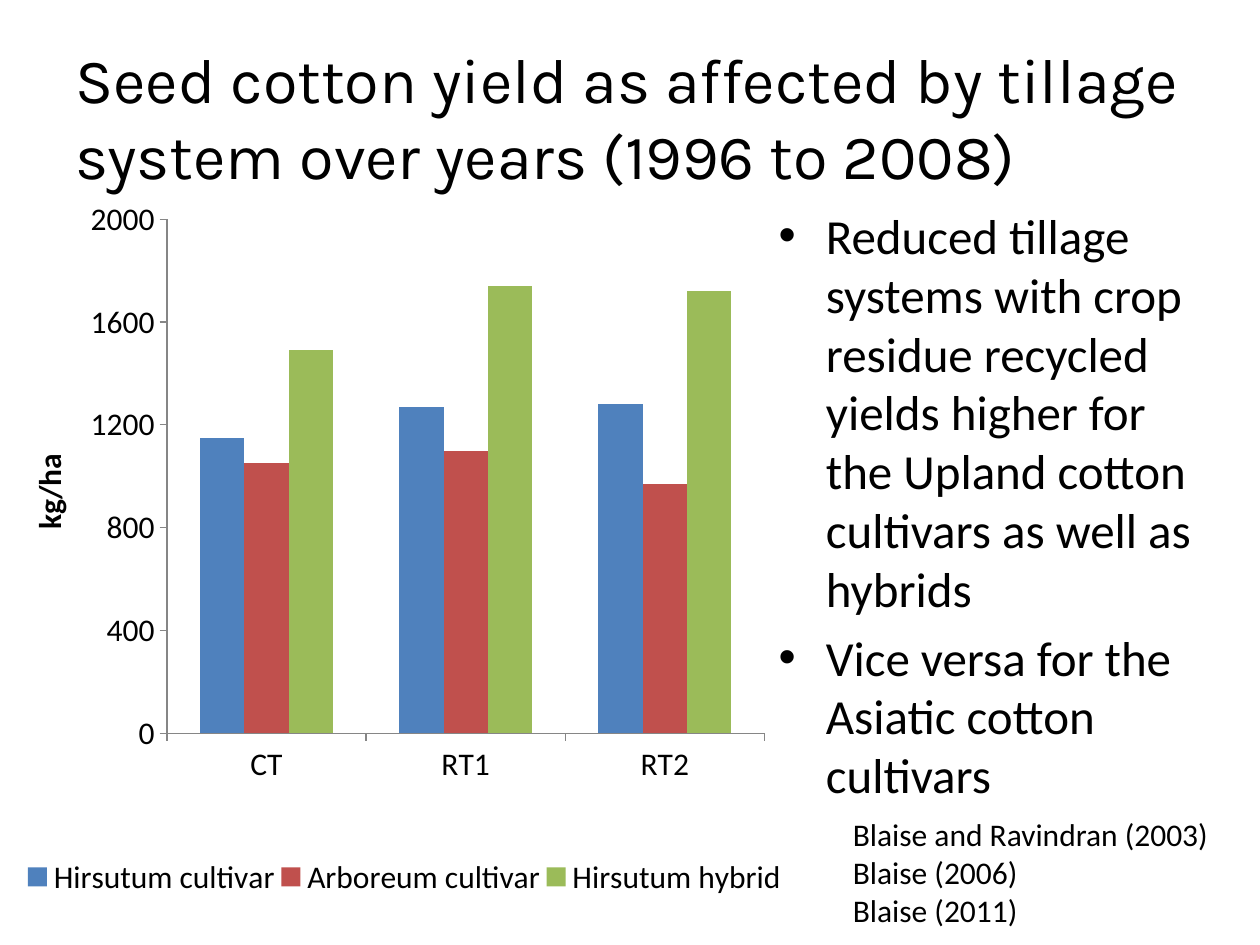
import pptx
import pptx.util
import pptx.chart.data
import pptx.dml.color
import pptx.enum.chart
import pptx.enum.text
import pptx.oxml
import pptx.oxml.ns

COLORS = {
    "text": "000000",
    "axis": "868686",
    "Hirsutum cultivar": "4F81BD",
    "Arboreum cultivar": "C0504D",
    "Hirsutum hybrid": "9BBB59",
}
YIELDS = {
    "Hirsutum cultivar": (1150, 1270, 1280),
    "Arboreum cultivar": (1050, 1100, 970),
    "Hirsutum hybrid": (1490, 1740, 1720),
}


def style_font(font, size, name="Calibri"):
    font.size = pptx.util.Pt(size)
    font.name = name
    font.color.rgb = pptx.dml.color.RGBColor.from_string(COLORS["text"])


def manual_layout(target, **shares):
    """Build a c:layout whose values are shares of the chart's size."""
    inner = '<c:layoutTarget val="inner"/>' if target == "inner" else ""
    values = "".join(f'<c:{key} val="{share}"/>' for key, share in shares.items())
    return pptx.oxml.parse_xml(
        f'<c:layout {pptx.oxml.ns.nsdecls("c")}><c:manualLayout>{inner}'
        f'<c:xMode val="edge"/><c:yMode val="edge"/>{values}'
        "</c:manualLayout></c:layout>"
    )


presentation = pptx.Presentation()
presentation.slide_width = pptx.util.Inches(10)
presentation.slide_height = pptx.util.Inches(7.5)
slide = presentation.slides.add_slide(presentation.slide_layouts[1])

# Title and bullet list
title, body = slide.placeholders
title.text_frame.text = (
    "Seed cotton yield as affected by tillage system over years (1996 to 2008)"
)
body.text_frame.text = (
    "Reduced tillage systems with crop residue recycled yields higher for "
    "the Upland cotton cultivars as well as hybrids\n"
    "Vice versa for the Asiatic cotton cultivars"
)

# Yield chart
chart_data = pptx.chart.data.CategoryChartData()
chart_data.categories = ["CT", "RT1", "RT2"]
for cultivar, values in YIELDS.items():
    chart_data.add_series(cultivar, values)
chart = slide.shapes.add_chart(
    pptx.enum.chart.XL_CHART_TYPE.COLUMN_CLUSTERED,
    *map(pptx.util.Inches, (0.17, 1.5, 6.08, 6)),
    chart_data,
).chart
style_font(chart.font, 18)
chart.has_title = False

plot = chart.plots[0]
plot.gap_width = 150
plot.overlap = 0
plot.vary_by_categories = False
for series in plot.series:
    series.format.fill.solid()
    series.format.fill.fore_color.rgb = pptx.dml.color.RGBColor.from_string(
        COLORS[series.name]
    )

for axis in (chart.category_axis, chart.value_axis):
    axis.has_major_gridlines = False
    axis.major_tick_mark = pptx.enum.chart.XL_TICK_MARK.OUTSIDE
    axis.minor_tick_mark = pptx.enum.chart.XL_TICK_MARK.NONE
    axis.format.line.color.rgb = pptx.dml.color.RGBColor.from_string(COLORS["axis"])
chart.value_axis.minimum_scale = 0
chart.value_axis.maximum_scale = 2000
chart.value_axis.major_unit = 400
axis_title = chart.value_axis.axis_title.text_frame
axis_title.text = "kg/ha"
axis_title_font = axis_title.paragraphs[0].runs[0].font
style_font(axis_title_font, 18)
axis_title_font.bold = True

chart.has_legend = True
chart.legend.position = pptx.enum.chart.XL_LEGEND_POSITION.BOTTOM
chart.legend.include_in_layout = False
style_font(chart.legend.font, 18)

chart_space = chart.element
for tag, layout, position in (
    ("c:plotArea", manual_layout("inner", x=0.19, y=0.04, w=0.78, h=0.68), 0),
    ("c:legend", manual_layout("outer", x=0, y=0.87, w=1, h=0.08), 1),
):
    parent = chart_space.find(f".//{pptx.oxml.ns.qn(tag)}")
    for old_layout in parent.findall(pptx.oxml.ns.qn("c:layout")):
        parent.remove(old_layout)
    parent.insert(position, layout)

# References
references = slide.shapes.add_textbox(0, 0, 0, 0)
references.text_frame.text = (
    "Blaise and Ravindran (2003)\nBlaise (2006)\nBlaise (2011)"
)

# Position and format of all text
for shape, bounds, size, font_name in (
    (title, (0.5, 0.3, 9, 1.25), 36, "Karla"),
    (body, (6.08, 1.58, 3.5, 4.92), 28, "Calibri"),
    (references, (6.67, 6.42, 3.33, 1.01), 18, "Calibri"),
):
    shape.left, shape.top, shape.width, shape.height = map(pptx.util.Inches, bounds)
    shape.text_frame.word_wrap = True
    shape.text_frame.auto_size = pptx.enum.text.MSO_AUTO_SIZE.NONE
    for paragraph in shape.text_frame.paragraphs:
        paragraph.alignment = pptx.enum.text.PP_ALIGN.LEFT
        style_font(paragraph.runs[0].font, size, font_name)
references.text_frame.auto_size = pptx.enum.text.MSO_AUTO_SIZE.SHAPE_TO_FIT_TEXT

presentation.save("out.pptx")
